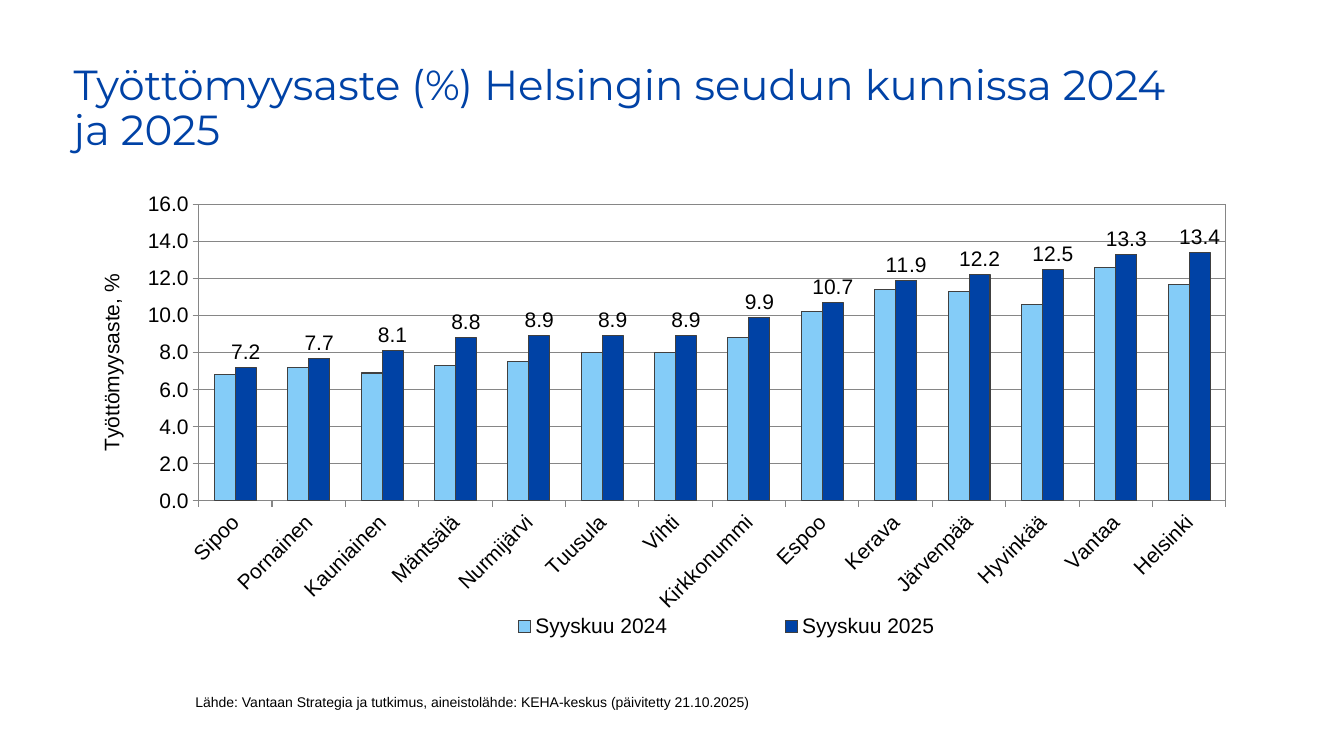
from lxml import etree
from pptx import Presentation
from pptx.chart.data import CategoryChartData
from pptx.dml.color import RGBColor
from pptx.enum import chart as charts, text
from pptx.oxml import parse_xml
from pptx.oxml.ns import nsdecls, qn
from pptx.util import Inches, Pt

BLUE, LIGHT_BLUE, BLACK = "0042A5", "84CCF8", "000000"
GRID_GREY, BAR_EDGE = "868686", "404040"

UNEMPLOYMENT = {
    "Sipoo": (6.8, 7.2), "Pornainen": (7.2, 7.7), "Kauniainen": (6.9, 8.1),
    "Mäntsälä": (7.3, 8.8), "Nurmijärvi": (7.5, 8.9), "Tuusula": (8, 8.9),
    "Vihti": (8, 8.9), "Kirkkonummi": (8.8, 9.9), "Espoo": (10.2, 10.7),
    "Kerava": (11.4, 11.9), "Järvenpää": (11.3, 12.2), "Hyvinkää": (10.6, 12.5),
    "Vantaa": (12.6, 13.3), "Helsinki": (11.7, 13.4),
}
MONTHS = {"Syyskuu 2024": LIGHT_BLUE, "Syyskuu 2025": BLUE}


def colour(value):
    return RGBColor.from_string(value)


def style_font(font, name, size, value):
    font.name = name
    font.size = Pt(size)
    font.bold = False
    font.color.rgb = colour(value)


def style_line(line, value):
    line.color.rgb = colour(value)
    line.width = Pt(0.75)


def place(box, left, top, width, height):
    box.left, box.top = Inches(left), Inches(top)
    box.width, box.height = Inches(width), Inches(height)


def write(box, words, font_name, size, value):
    frame = box.text_frame
    frame.word_wrap = True
    para = frame.paragraphs[0]
    para.alignment = text.PP_ALIGN.LEFT
    span = para.add_run()
    span.text = words
    style_font(span.font, font_name, size, value)
    return para


def manual_layout(x, y, width=None, height=None, inner=False):
    """Chart layout element, in fractions of the chart's size."""
    layout = parse_xml(f"<c:layout {nsdecls('c')}><c:manualLayout/></c:layout>")
    settings = [("layoutTarget", "inner" if inner else None),
                ("xMode", "edge"), ("yMode", "edge"),
                ("x", x), ("y", y), ("w", width), ("h", height)]
    for name, value in settings:
        if value is not None:
            etree.SubElement(layout[0], qn(f"c:{name}")).set("val", str(value))
    return layout


def set_layout(parent, layout, after=None):
    for old in parent.findall(qn("c:layout")):
        parent.remove(old)
    if after is None:
        parent.insert(0, layout)
    else:
        parent.find(qn(after)).addnext(layout)


def add_title(page):
    title = page.shapes.title
    place(title, 0.63, 0.54, 11.07, 1.09)
    title.text_frame.vertical_anchor = text.MSO_ANCHOR.MIDDLE
    para = write(title, "Työttömyysaste (%) Helsingin seudun kunnissa 2024 ja 2025",
                 "Montserrat", 30, "0042A6")
    para.line_spacing = 0.9


def add_source(page):
    box = page.shapes.add_textbox(Inches(1.84), Inches(6.83), Inches(5.8), Inches(0.4))
    write(box, "Lähde: Vantaan Strategia ja tutkimus, aineistolähde: "
               "KEHA-keskus (päivitetty 21.10.2025)", "Arial", 10, BLACK)


def format_axes(chart):
    category, value = chart.category_axis, chart.value_axis
    for axis in (category, value):
        axis.major_tick_mark = charts.XL_TICK_MARK.OUTSIDE
        axis.minor_tick_mark = charts.XL_TICK_MARK.NONE
        style_line(axis.format.line, GRID_GREY)
        style_font(axis.tick_labels.font, "Arial", 15, BLACK)

    # Slanted municipality names
    labels = category._element.find(qn("c:txPr")).find(qn("a:bodyPr"))
    labels.set("rot", "-2700000")
    labels.set("vert", "horz")

    value.minimum_scale, value.maximum_scale, value.major_unit = 0, 16, 2
    value.tick_labels.number_format = "0.0"
    value.tick_labels.number_format_is_linked = False
    value.has_major_gridlines = True
    style_line(value.major_gridlines.format.line, GRID_GREY)

    # Rotated axis title
    frame = value.axis_title.text_frame
    span = frame.paragraphs[0].add_run()
    span.text = "Työttömyysaste, %"
    style_font(span.font, "Arial", 15, BLACK)
    body = frame._txBody.find(qn("a:bodyPr"))
    body.set("rot", "-5400000")
    body.set("vert", "horz")
    set_layout(value.axis_title._element, manual_layout(0.01, 0.18), after="c:tx")


def format_bars(plot):
    plot.gap_width, plot.overlap = 150, 0
    plot.vary_by_categories = False
    for series, fill in zip(plot.series, MONTHS.values()):
        series.invert_if_negative = False
        series.format.fill.solid()
        series.format.fill.fore_color.rgb = colour(fill)
        style_line(series.format.line, BAR_EDGE)

    labels = plot.series[1].data_labels
    labels.show_value = True
    labels.number_format, labels.number_format_is_linked = "0.0", False
    labels.position = charts.XL_LABEL_POSITION.OUTSIDE_END
    style_font(labels.font, "Arial", 15, BLACK)


def add_unemployment_chart(page):
    data = CategoryChartData(number_format="0.0")
    data.categories = list(UNEMPLOYMENT)
    for month, values in zip(MONTHS, zip(*UNEMPLOYMENT.values())):
        data.add_series(month, values)
    chart = page.shapes.add_chart(
        charts.XL_CHART_TYPE.COLUMN_CLUSTERED,
        Inches(0.82), Inches(1.86), Inches(11.5), Inches(4.56), data).chart
    chart.has_title = False
    style_font(chart.font, "Arial", 15, BLACK)
    format_axes(chart)
    format_bars(chart.plots[0])

    # Plot area with a thin frame
    area = chart._chartSpace.chart.plotArea
    set_layout(area, manual_layout(0.1, 0.037, 0.886, 0.645, inner=True))
    area.append(parse_xml(
        f"<c:spPr {nsdecls('c', 'a')}><a:noFill/><a:ln w='9525'><a:solidFill>"
        f"<a:srgbClr val='{GRID_GREY}'/></a:solidFill></a:ln></c:spPr>"))

    # Legend below the municipality names
    chart.has_legend = True
    chart.legend.position = charts.XL_LEGEND_POSITION.BOTTOM
    chart.legend.include_in_layout = False
    style_font(chart.legend.font, "Arial", 15, BLACK)
    set_layout(chart.legend._element, manual_layout(0.28, 0.91, 0.55, 0.09),
               after="c:legendPos")


def main():
    deck = Presentation()
    deck.slide_width, deck.slide_height = Inches(13.33), Inches(7.5)
    page = deck.slides.add_slide(deck.slide_layouts[5])
    add_title(page)
    add_unemployment_chart(page)
    add_source(page)
    deck.save("out.pptx")


if __name__ == "__main__":
    main()
